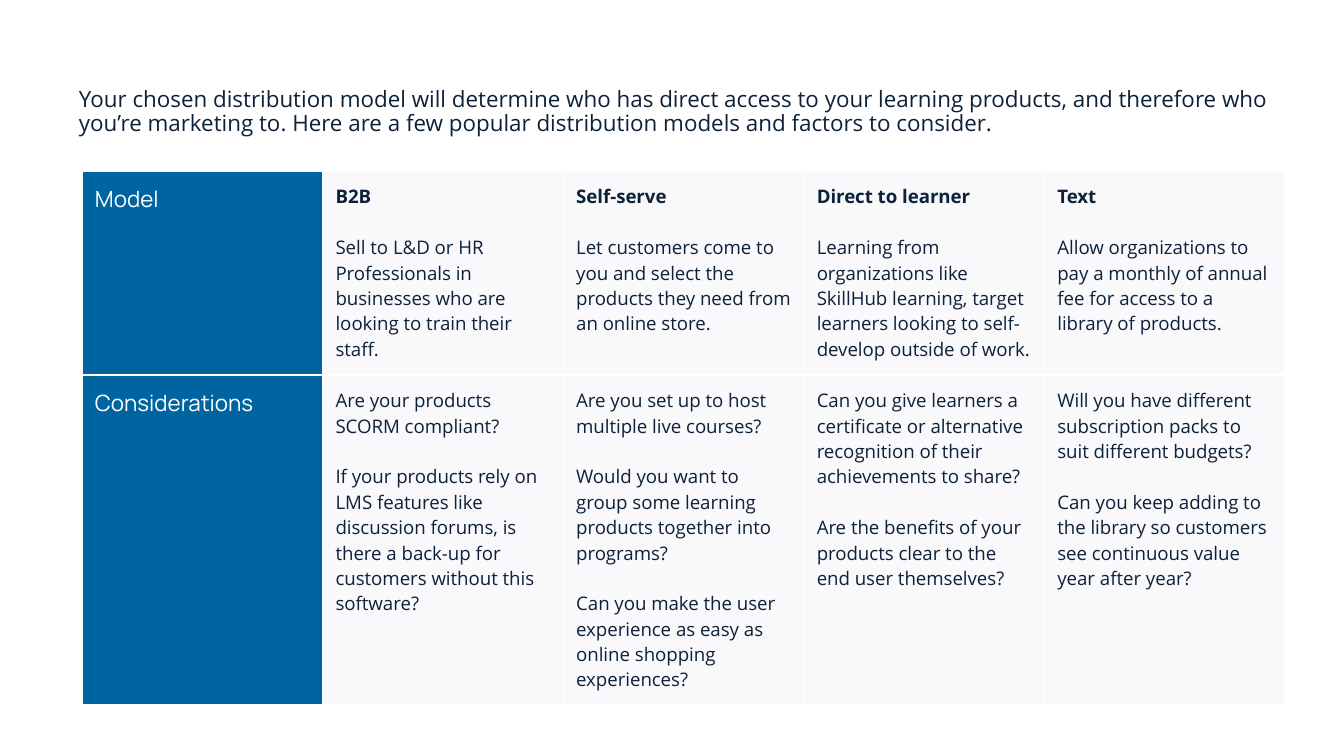
from dataclasses import dataclass

from lxml.etree import SubElement as Sub
from pptx import Presentation
from pptx.dml.color import RGBColor as Rgb
from pptx.oxml.ns import qn
from pptx.util import Emu, Pt

SCALE = 914400 / 134.4  # EMU in one px
PAD = 13


def px(n):
    return Emu(round(n * SCALE))


@dataclass(frozen=True)
class Theme:
    ink: str = "0D2139"
    white: str = "FFFFFF"
    blue: str = "0064A1"
    pale: str = "F9F9FB"
    body: str = "Open Sans"
    head: str = "Manrope"
    large: float = 12
    small: float = 10
    gap: float = 13.6  # one line of small text
    rule: float = 0.75


class Deck:
    def __init__(self, theme, wide, high):
        self.theme = theme
        self.prs = Presentation()
        self.prs.slide_width, self.prs.slide_height = px(wide), px(high)
        self.slide = self.prs.slides.add_slide(self.prs.slide_layouts[6])

    def run(self, para, text, size, face, color, bold=False):
        run = para.add_run()
        run.text = text
        font = run.font
        font.size, font.name, font.bold = Pt(size), face, bold
        font.color.rgb = Rgb.from_string(color)

    def pad(self, box):
        box.margin_left = box.margin_right = px(PAD)
        box.margin_top = box.margin_bottom = px(PAD)

    def text(self, x, y, w, h, words):
        t = self.theme
        frame = self.slide.shapes.add_textbox(px(x), px(y), px(w), px(h)).text_frame
        frame.word_wrap = True
        self.pad(frame)
        para = frame.paragraphs[0]
        para.line_spacing = 0.9
        self.run(para, words, t.large, t.body, t.ink)

    def edge(self, cell):
        props = cell._tc.get_or_add_tcPr()
        for side in ("a:lnL", "a:lnR", "a:lnT", "a:lnB"):
            line = Sub(props, qn(side), w=str(Pt(self.theme.rule)))
            fill = Sub(line, qn("a:solidFill"))
            Sub(fill, qn("a:srgbClr"), val=self.theme.white)

    def cell(self, cell, paras, label, title):
        t = self.theme
        self.pad(cell)
        self.edge(cell)
        cell.fill.solid()
        cell.fill.fore_color.rgb = Rgb.from_string(t.blue if label else t.pale)
        frame = cell.text_frame
        for i, words in enumerate(paras):
            para = frame.add_paragraph() if i else frame.paragraphs[0]
            if i:
                para.space_before = Pt(t.gap)
            if label:
                self.run(para, words, t.large, t.head, t.white)
            else:
                self.run(para, words, t.small, t.body, t.ink, title and i == 0)

    def table(self, x, y, w, highs, rows):
        table = self.slide.shapes.add_table(
            len(rows), len(rows[0]), px(x), px(y), px(w), px(sum(highs))).table
        table.first_row = table.horz_banding = False
        for r, (high, row) in enumerate(zip(highs, rows)):
            table.rows[r].height = px(high)
            for c, paras in enumerate(row):
                self.cell(table.cell(r, c), paras, label=c == 0, title=r == 0)


INTRO = (
    "Your chosen distribution model will determine who has direct access to your "
    "learning products, and therefore who you’re marketing to. Here are a few "
    "popular distribution models and factors to consider."
)

# Each cell is a list of paragraphs
ROWS = [
    [
        ["Model"],
        ["B2B",
         "Sell to L&D or HR Professionals in businesses who are looking to train "
         "their staff."],
        ["Self-serve",
         "Let customers come to you and select the products they need from an "
         "online store."],
        ["Direct to learner",
         "Learning from organizations like SkillHub learning, target learners "
         "looking to self-develop outside of work."],
        ["Text",
         "Allow organizations to pay a monthly of annual fee for access to a "
         "library of products."],
    ],
    [
        ["Considerations"],
        ["Are your products SCORM compliant?",
         "If your products rely on LMS features like discussion forums, is there a "
         "back-up for customers without this software?"],
        ["Are you set up to host multiple live courses?",
         "Would you want to group some learning products together into programs?",
         "Can you make the user experience as easy as online shopping experiences?"],
        ["Can you give learners a certificate or alternative recognition of their "
         "achievements to share?",
         "Are the benefits of your products clear to the end user themselves?"],
        ["Will you have different subscription packs to suit different budgets?",
         "Can you keep adding to the library so customers see continuous value year "
         "after year?"],
    ],
]


def main():
    deck = Deck(Theme(), 1344, 756)
    # Introduction
    deck.text(66, 75, 1219, 90, INTRO)
    # Distribution models
    deck.table(82, 171, 1203, [204, 330], ROWS)
    deck.prs.save("out.pptx")


if __name__ == "__main__":
    main()
